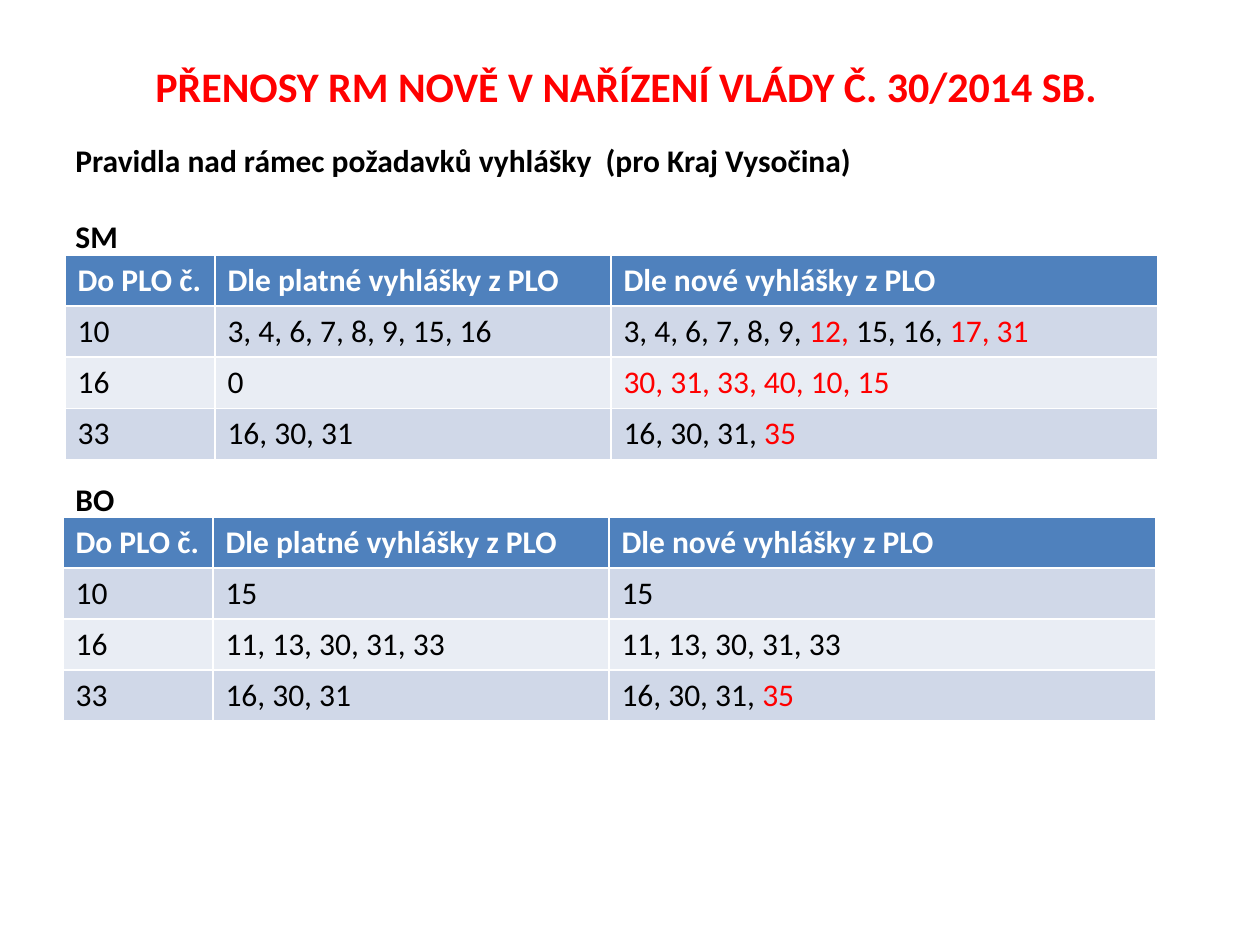
from dataclasses import dataclass

from pptx import Presentation
from pptx.dml.color import RGBColor
from pptx.enum.text import MSO_ANCHOR, PP_ALIGN
from pptx.util import Emu, Pt

PX_PER_INCH = 126


@dataclass(frozen=True)
class Theme:
    font: str = "Calibri"
    title_size: int = 24
    body_size: int = 18
    text: str = "000000"
    accent: str = "FF0000"
    header_text: str = "FFFFFF"
    header_fill: str = "4F81BD"
    bands: tuple = ("D0D8E8", "E9EDF4")


THEME = Theme()
COLUMN_WIDTHS = (150, 396, 547)
ROW_HEIGHT = 51
HEADER = ("Do PLO č.", "Dle platné vyhlášky z PLO", "Dle nové vyhlášky z PLO")

# Text between bars is new and shows in the accent colour.
SPRUCE_ROWS = (
    ("10", "3, 4, 6, 7, 8, 9, 15, 16", "3, 4, 6, 7, 8, 9, |12, |15, 16, |17, 31|"),
    ("16", "0", "|30, 31, 33, 40, 10, 15|"),
    ("33", "16, 30, 31", "16, 30, 31, |35|"),
)
PINE_ROWS = (
    ("10", "15", "15"),
    ("16", "11, 13, 30, 31, 33", "11, 13, 30, 31, 33"),
    ("33", "16, 30, 31", "16, 30, 31, |35|"),
)


def px(length):
    return Emu(round(length * 914400 / PX_PER_INCH))


def write(paragraph, text, *, size=THEME.body_size, color=THEME.text, bold=False,
          align=None, space_before=0):
    """Fill a paragraph, giving the parts between bars the accent colour."""
    paragraph.alignment = align
    paragraph.space_before = Pt(space_before)
    for index, part in enumerate(text.split("|")):
        if not part:
            continue
        run = paragraph.add_run()
        run.text = part
        run.font.name = THEME.font
        run.font.size = Pt(size)
        run.font.bold = bold
        run.font.color.rgb = RGBColor.from_string(THEME.accent if index % 2 else color)


def place_title(slide, text):
    title = slide.shapes.title
    title.left, title.top, title.width, title.height = map(px, (64, 16, 1134, 139))
    title.text_frame.vertical_anchor = MSO_ANCHOR.MIDDLE
    write(title.text_frame.paragraphs[0], text, size=THEME.title_size,
          color=THEME.accent, bold=True, align=PP_ALIGN.CENTER)


def add_headings(slide, headings):
    """Add one text box from (text, space before in points) pairs."""
    frame = slide.shapes.add_textbox(*map(px, (63, 135, 974, 432))).text_frame
    frame.word_wrap = True
    for index, (text, space) in enumerate(headings):
        paragraph = frame.add_paragraph() if index else frame.paragraphs[0]
        write(paragraph, text, bold=True, space_before=space)


def add_transfer_table(slide, left, top, rows):
    all_rows = (HEADER, *rows)
    table = slide.shapes.add_table(
        len(all_rows), len(HEADER), px(left), px(top),
        px(sum(COLUMN_WIDTHS)), px(ROW_HEIGHT * len(all_rows))).table
    for column, width in zip(table.columns, COLUMN_WIDTHS):
        column.width = px(width)
    for row_index, texts in enumerate(all_rows):
        is_header = row_index == 0
        fill = THEME.header_fill if is_header else THEME.bands[(row_index - 1) % 2]
        table.rows[row_index].height = px(ROW_HEIGHT)
        for cell, text in zip(table.rows[row_index].cells, texts):
            cell.fill.solid()
            cell.fill.fore_color.rgb = RGBColor.from_string(fill)
            write(cell.text_frame.paragraphs[0], text, bold=is_header,
                  color=THEME.header_text if is_header else THEME.text)


def main():
    presentation = Presentation()
    presentation.slide_width, presentation.slide_height = px(1260), px(945)
    slide = presentation.slides.add_slide(presentation.slide_layouts[5])
    place_title(slide, "PŘENOSY RM NOVĚ V NAŘÍZENÍ VLÁDY Č. 30/2014 SB. ")
    add_transfer_table(slide, 65, 255, SPRUCE_ROWS)
    add_headings(slide, (
        ("Pravidla nad rámec požadavků vyhlášky  (pro Kraj Vysočina)", 0),
        ("SM", 21.5),
        ("BO", 129),
    ))
    add_transfer_table(slide, 63, 517, PINE_ROWS)
    presentation.save("out.pptx")


if __name__ == "__main__":
    main()
